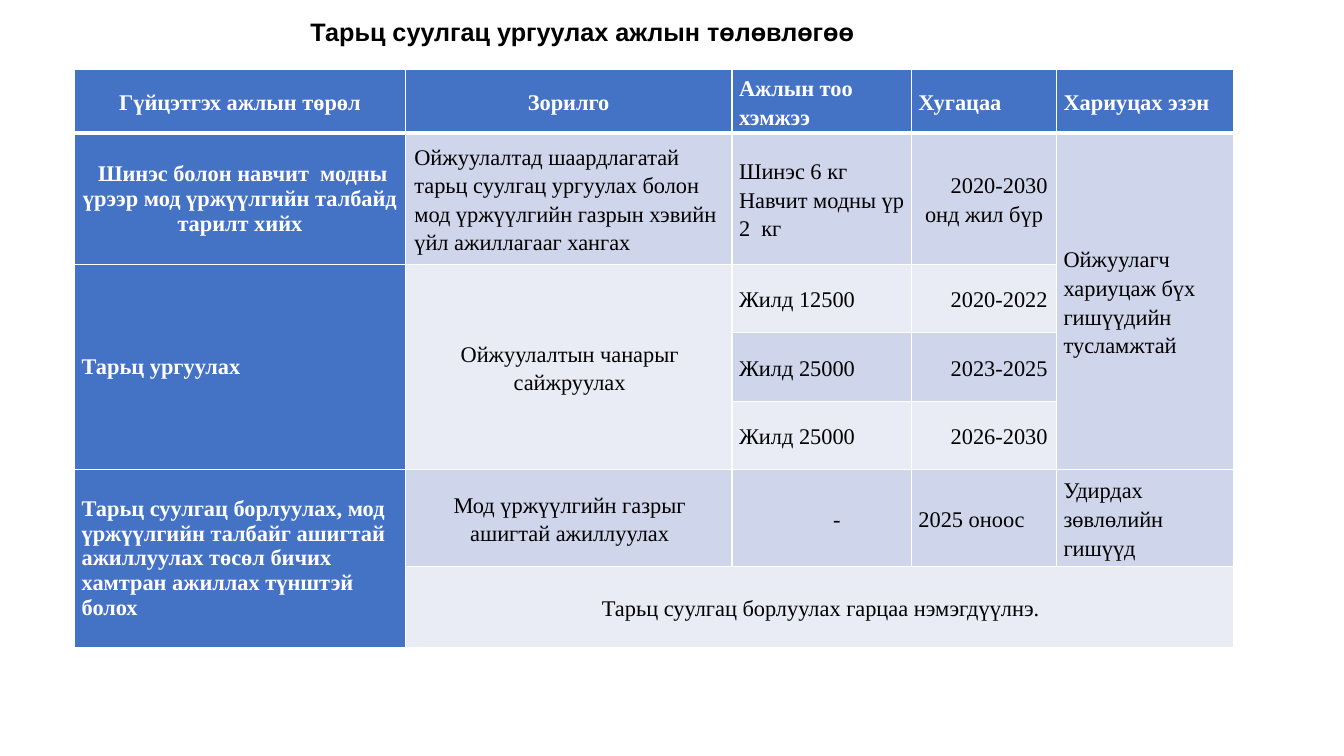
from dataclasses import dataclass

from lxml import etree
from pptx import Presentation
from pptx.dml.color import RGBColor
from pptx.enum.text import MSO_ANCHOR, MSO_AUTO_SIZE, PP_ALIGN
from pptx.oxml.ns import qn
from pptx.table import Table, _Cell
from pptx.text.text import TextFrame
from pptx.util import Pt

EMU_PER_PX = 9144  # 100 px to the inch
LEFT, CENTER = PP_ALIGN.LEFT, PP_ALIGN.CENTER
MIDDLE = MSO_ANCHOR.MIDDLE
FIT_SHAPE = MSO_AUTO_SIZE.SHAPE_TO_FIT_TEXT

BLACK, WHITE = "000000", "FFFFFF"
BLUE, DARK_BAND, LIGHT_BAND = "4472C4", "CFD5EA", "E9EBF5"

COLUMN_WIDTHS = (328, 324, 178, 144, 176)
ROW_HEIGHTS = (63, 130, 68, 68, 68, 96, 80)
HEADER_RULE, GRID_RULE = 3, 1


@dataclass(frozen=True)
class PlanCell:
    row: int
    column: int
    text: str
    align: PP_ALIGN = LEFT
    margin: int = 0
    indent: int = 0
    row_span: int = 1
    column_span: int = 1

    @property
    def is_heading(self) -> bool:
        return self.row == 0 or self.column == 0

    @property
    def fill(self) -> str:
        if self.is_heading:
            return BLUE
        return DARK_BAND if self.row % 2 else LIGHT_BAND

    @property
    def spacing(self) -> float:
        return 1.0 if self.column == 0 and self.row > 0 else 1.15


PLAN = (
    PlanCell(0, 0, "Гүйцэтгэх ажлын төрөл", CENTER),
    PlanCell(0, 1, "Зорилго", CENTER),
    PlanCell(0, 2, "Ажлын тоо хэмжээ"),
    PlanCell(0, 3, "Хугацаа"),
    PlanCell(0, 4, "Хариуцах эзэн"),
    PlanCell(1, 0, " Шинэс болон навчит  модны үрээр мод үржүүлгийн талбайд тарилт хийх", CENTER),
    PlanCell(1, 1, "Ойжуулалтад шаардлагатай тарьц суулгац ургуулах болон мод үржүүлгийн "
                   "газрын хэвийн үйл ажиллагааг хангах", margin=2),
    PlanCell(1, 2, "Шинэс 6 кг\nНавчит модны үр 2  кг"),
    PlanCell(1, 3, "2020-2030 онд жил бүр", CENTER, indent=30),
    PlanCell(1, 4, "Ойжуулагч хариуцаж бүх гишүүдийн тусламжтай", row_span=4),
    PlanCell(2, 0, "Тарьц ургуулах", row_span=3),
    PlanCell(2, 1, "Ойжуулалтын чанарыг сайжруулах", CENTER, margin=2, row_span=3),
    PlanCell(2, 2, "Жилд 12500"),
    PlanCell(2, 3, "2020-2022", CENTER, indent=30),
    PlanCell(3, 2, "Жилд 25000"),
    PlanCell(3, 3, "2023-2025", CENTER, indent=30),
    PlanCell(4, 2, "Жилд 25000"),
    PlanCell(4, 3, "2026-2030", CENTER, indent=30),
    PlanCell(5, 0, "Тарьц суулгац борлуулах, мод үржүүлгийн талбайг ашигтай ажиллуулах "
                   "төсөл бичих хамтран ажиллах түнштэй болох", row_span=2),
    PlanCell(5, 1, "Мод үржүүлгийн газрыг ашигтай ажиллуулах", CENTER, margin=2),
    PlanCell(5, 2, "-", CENTER, indent=30),
    PlanCell(5, 3, "2025 оноос"),
    PlanCell(5, 4, "Удирдах зөвлөлийн гишүүд"),
    PlanCell(6, 1, "Тарьц суулгац борлуулах гарцаа нэмэгдүүлнэ.", CENTER, margin=2, column_span=4),
)


def px(length: int) -> int:
    return length * EMU_PER_PX


def color(hex_code: str) -> RGBColor:
    return RGBColor.from_string(hex_code)


def write_text(frame: TextFrame, text: str, *, font: str, size: int, ink: str = BLACK,
               bold: bool = False, align: PP_ALIGN = LEFT, spacing: float = 1.0,
               margin: int = 0, indent: int = 0) -> None:
    """Write one paragraph for each line of text."""
    for number, line in enumerate(text.split("\n")):
        paragraph = frame.add_paragraph() if number else frame.paragraphs[0]
        paragraph.alignment = align
        paragraph.line_spacing = spacing
        properties = paragraph._p.get_or_add_pPr()
        properties.set("marL", str(px(margin)))
        properties.set("indent", str(px(indent)))
        run = paragraph.add_run()
        run.text = line
        run.font.name = font
        run.font.size = Pt(size)
        run.font.bold = bold
        run.font.color.rgb = color(ink)


def draw_borders(cell: _Cell, top: int, bottom: int) -> None:
    """Put white rules ahead of the fill, as the schema orders them."""
    properties = cell._tc.get_or_add_tcPr()
    widths = {"a:lnL": GRID_RULE, "a:lnR": GRID_RULE, "a:lnT": top, "a:lnB": bottom}
    for position, (tag, width) in enumerate(widths.items()):
        rule = etree.Element(qn(tag), w=str(Pt(width)))
        solid = etree.SubElement(rule, qn("a:solidFill"))
        etree.SubElement(solid, qn("a:srgbClr"), val=WHITE)
        properties.insert(position, rule)


def fill_plan_cell(table: Table, plan: PlanCell) -> None:
    last_row = plan.row + plan.row_span - 1
    last_column = plan.column + plan.column_span - 1
    origin = table.cell(plan.row, plan.column)
    if (last_row, last_column) != (plan.row, plan.column):
        origin.merge(table.cell(last_row, last_column))
    for row in range(plan.row, last_row + 1):
        for column in range(plan.column, last_column + 1):
            part = table.cell(row, column)
            part.fill.solid()
            part.fill.fore_color.rgb = color(plan.fill)
            draw_borders(part, top=HEADER_RULE if row == 1 else GRID_RULE,
                         bottom=HEADER_RULE if row == 0 else GRID_RULE)
    origin.vertical_anchor = MIDDLE
    origin.margin_left = origin.margin_right = px(7)
    origin.margin_top = origin.margin_bottom = 0
    write_text(origin.text_frame, plan.text, font="Times New Roman", size=16,
               ink=WHITE if plan.is_heading else BLACK, bold=plan.is_heading,
               align=plan.align, spacing=plan.spacing,
               margin=plan.margin, indent=plan.indent)


def main() -> None:
    presentation = Presentation()
    presentation.slide_width, presentation.slide_height = px(1333), px(750)
    slide = presentation.slides.add_slide(presentation.slide_layouts[6])

    title = slide.shapes.add_textbox(px(298), px(11), px(565), px(40)).text_frame
    title.word_wrap = False
    title.auto_size = FIT_SHAPE
    write_text(title, "Тарьц суулгац ургуулах ажлын төлөвлөгөө", font="Arial", size=18, bold=True)

    table = slide.shapes.add_table(
        len(ROW_HEIGHTS), len(COLUMN_WIDTHS), px(74), px(69),
        px(sum(COLUMN_WIDTHS)), px(sum(ROW_HEIGHTS))).table
    for column, width in zip(table.columns, COLUMN_WIDTHS):
        column.width = px(width)
    for row, height in zip(table.rows, ROW_HEIGHTS):
        row.height = px(height)
    for plan in PLAN:
        fill_plan_cell(table, plan)

    presentation.save("out.pptx")


if __name__ == "__main__":
    main()
